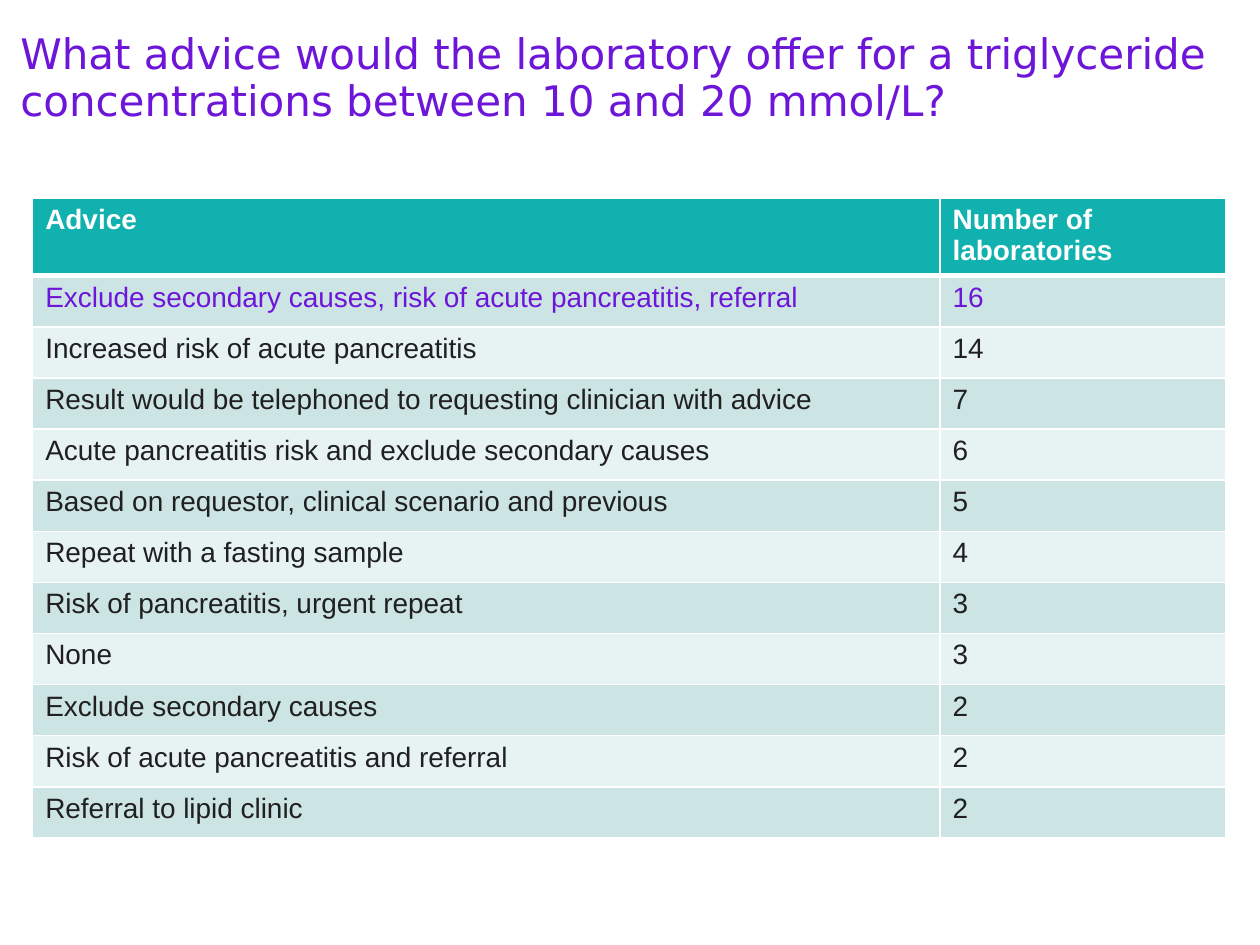
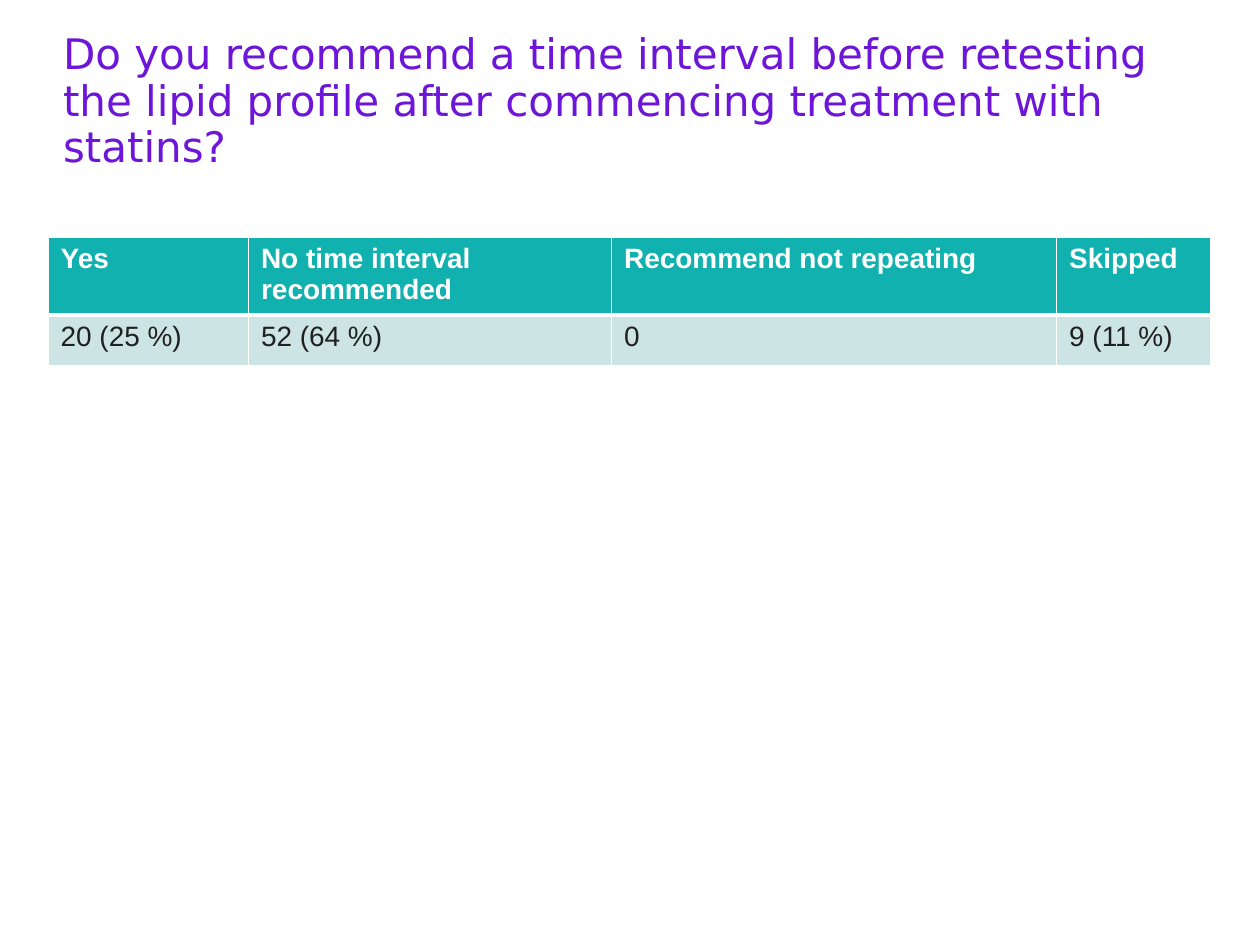
from dataclasses import dataclass

from lxml.etree import SubElement
from pptx import Presentation
from pptx.dml.color import RGBColor
from pptx.enum.text import MSO_ANCHOR, MSO_AUTO_SIZE, PP_ALIGN
from pptx.oxml.ns import qn
from pptx.util import Cm, Pt

PURPLE = "6D15D8"
TEAL = "10B1AE"
BANDS = ("CCE4E3", "E7F2F2")
WHITE = "FFFFFF"
INK = "202020"
TITLE_FONT = "DejaVu Sans"
TABLE_FONT = "Arial"
TITLE_TOP, TITLE_HEIGHT = 0.66, 1.88
HEADER_HEIGHT, ROW_HEIGHT = 1.57, 1.03
THIN, THICK = 1, 3
TITLE_ONLY = 5


@dataclass
class TableSlide:
    """A question with its answers; all lengths are in centimetres."""
    title: str
    title_left: float
    title_width: float
    table_left: float
    table_top: float
    columns: tuple[float, ...]
    rows: list[tuple[str, ...]]
    highlighted_row: int | None = None


SLIDES = [
    TableSlide(
        "What advice would the laboratory offer for a triglyceride "
        "concentrations between 10 and 20 mmol/L?",
        0.41, 24.36, 0.66, 3.99, (18.29, 5.77),
        [
            ("Advice", "Number of laboratories"),
            ("Exclude secondary causes, risk of acute pancreatitis, referral", "16"),
            ("Increased risk of acute pancreatitis", "14"),
            ("Result would be telephoned to requesting clinician with advice", "7"),
            ("Acute pancreatitis risk and exclude secondary causes", "6"),
            ("Based on requestor, clinical scenario and previous", "5"),
            ("Repeat with a fasting sample", "4"),
            ("Risk of pancreatitis, urgent repeat", "3"),
            ("None", "3"),
            ("Exclude secondary causes", "2"),
            ("Risk of acute pancreatitis and referral", "2"),
            ("Referral to lipid clinic", "2"),
        ],
        highlighted_row=1,
    ),
    TableSlide(
        "Do you recommend a time interval before retesting the lipid profile "
        "after commencing treatment with statins?",
        1.27, 22.86, 0.97, 4.78, (4.04, 7.32, 8.97, 3.1),
        [
            ("Yes", "No time interval recommended", "Recommend not repeating", "Skipped"),
            ("20 (25 %)", "52 (64 %)", "0", "9 (11 %)"),
        ],
    ),
]


def rgb(colour: str) -> RGBColor:
    return RGBColor.from_string(colour)


def format_text(paragraph, font: str, size: int, colour: str, bold: bool = False) -> None:
    for span in paragraph.runs:
        span.font.name = font
        span.font.size = Pt(size)
        span.font.bold = bold
        span.font.color.rgb = rgb(colour)


def set_borders(cell, top: int, bottom: int) -> None:
    """Draw white cell borders, with the top and bottom widths in points."""
    properties = cell._tc.get_or_add_tcPr()
    widths = {"a:lnL": THIN, "a:lnR": THIN, "a:lnT": top, "a:lnB": bottom}
    for position, (tag, width) in enumerate(widths.items()):
        line = SubElement(properties, qn(tag), w=str(Pt(width)))
        fill = SubElement(line, qn("a:solidFill"))
        SubElement(fill, qn("a:srgbClr"), val=WHITE)
        properties.insert(position, line)


def add_title(page, content: TableSlide) -> None:
    title = page.shapes.title
    title.left, title.top = Cm(content.title_left), Cm(TITLE_TOP)
    title.width, title.height = Cm(content.title_width), Cm(TITLE_HEIGHT)
    frame = title.text_frame
    frame.text = content.title
    frame.word_wrap = True
    frame.auto_size = MSO_AUTO_SIZE.NONE
    frame.vertical_anchor = MSO_ANCHOR.TOP
    frame.margin_left = frame.margin_right = frame.margin_top = frame.margin_bottom = 0
    paragraph = frame.paragraphs[0]
    paragraph.alignment = PP_ALIGN.LEFT
    paragraph.line_spacing = 0.92
    format_text(paragraph, TITLE_FONT, 24, PURPLE)


def add_answers(page, content: TableSlide) -> None:
    heights = [HEADER_HEIGHT] + [ROW_HEIGHT] * (len(content.rows) - 1)
    table = page.shapes.add_table(
        len(content.rows), len(content.columns),
        Cm(content.table_left), Cm(content.table_top),
        Cm(sum(content.columns)), Cm(sum(heights)),
    ).table
    for column, width in zip(table.columns, content.columns):
        column.width = Cm(width)
    for index, (values, height) in enumerate(zip(content.rows, heights)):
        table.rows[index].height = Cm(height)
        header = index == 0
        if header:
            fill, ink = TEAL, WHITE
        else:
            fill = BANDS[(index - 1) % len(BANDS)]
            ink = PURPLE if index == content.highlighted_row else INK
        for cell, value in zip(table.rows[index].cells, values):
            cell.text = value
            cell.fill.solid()
            cell.fill.fore_color.rgb = rgb(fill)
            format_text(cell.text_frame.paragraphs[0], TABLE_FONT, 16, ink, header)
            set_borders(cell, THICK if index == 1 else THIN, THICK if header else THIN)


def main() -> None:
    deck = Presentation()
    deck.slide_width, deck.slide_height = Cm(25.4), Cm(19.05)
    for content in SLIDES:
        page = deck.slides.add_slide(deck.slide_layouts[TITLE_ONLY])
        add_title(page, content)
        add_answers(page, content)
    deck.save("out.pptx")


if __name__ == "__main__":
    main()
